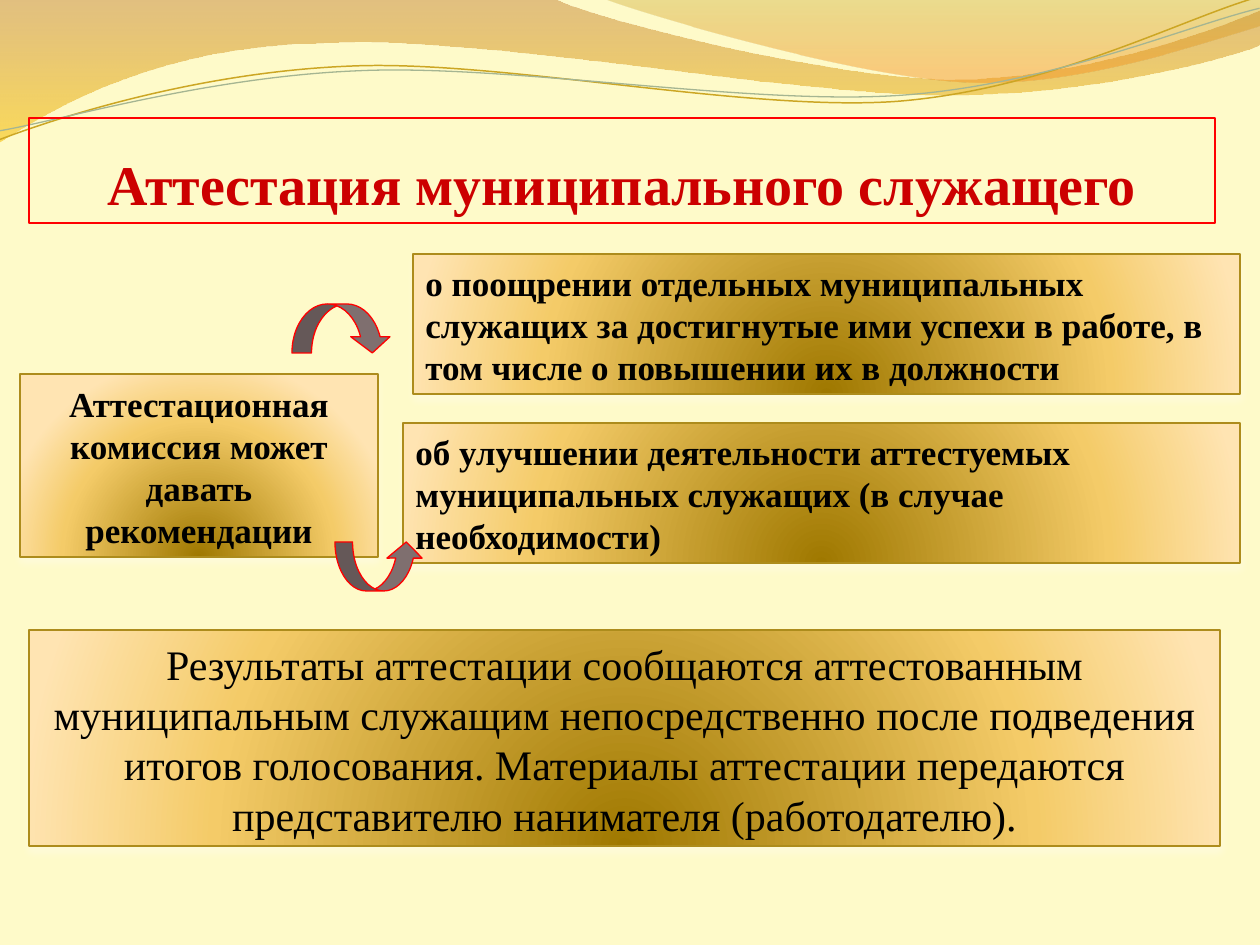
from lxml.etree import SubElement
from pptx import Presentation
from pptx.dml.color import RGBColor
from pptx.enum.shapes import MSO_SHAPE as Preset
from pptx.enum.text import MSO_ANCHOR as Anchor, MSO_AUTO_SIZE as AutoSize, PP_ALIGN as Align
from pptx.oxml import parse_xml
from pptx.oxml.ns import nsdecls, qn
from pptx.util import Emu, Pt

SLIDE_WIDTH, SLIDE_HEIGHT = 1260, 945
SCALE = 9144000 / SLIDE_WIDTH
STRAND_TILT = 357.3
FONT = "Times New Roman"

CREAM = RGBColor(0xFE, 0xFA, 0xC9)
BLACK = RGBColor(0x00, 0x00, 0x00)
CRIMSON = RGBColor(0xCC, 0x00, 0x00)
RED = RGBColor(0xFF, 0x00, 0x00)
GRAY = RGBColor(0x7F, 0x6F, 0x6F)
BRONZE = RGBColor(0xAD, 0x8C, 0x1C)
IVORY = RGBColor(0xFF, 0xFC, 0xEC)
OCHRE = RGBColor(0xCC, 0xA6, 0x24)
SAGE = RGBColor(0xA5, 0xB5, 0x92)

LINEAR_DOWN = '<a:lin ang="5400000" scaled="1"/>'
GLOW_BELOW = (
    '<a:path path="circle">'
    '<a:fillToRect l="50000" t="130000" r="50000" b="-30000"/></a:path>'
)
GOLD_STOPS = [
    (0, RGBColor(0x9F, 0x78, 0x00), 100),
    (68, RGBColor(0xF4, 0xCB, 0x68), 100),
    (100, RGBColor(0xFF, 0xE4, 0xB2), 100),
]
AMBER_STOPS = [
    (0, RGBColor(0xC0, 0x7A, 0x28), 45),
    (100, RGBColor(0xF7, 0xBF, 0x00), 55),
]
ORANGE_STOPS = [
    (0, RGBColor(0xC0, 0x97, 0x09), 30),
    (80, RGBColor(0xF5, 0x93, 0x20), 45),
]

WIDE_WAVE = [
    (0, 0), (554, -1),
    (600, 21, 837, 79, 955, 79), (1075, 79, 1207, 33, 1260, 11),
    (1261, 45),
    (1239, 55, 1096, 96, 940, 95), (784, 94, 481, 35, 324, 43),
    (163, 45, 58, 105, -1, 142), (0, 0),
]
RIGHT_WAVE = [
    (604, -1),
    (641, 14, 859, 78, 969, 82), (1079, 87, 1211, 40, 1260, 26),
    (1260, 0), (604, -1),
]
OCHRE_STRAND = [
    (-3, 110),
    (58, 90, 199, 52, 350, 53), (499, 53, 745, 118, 896, 114),
    (1049, 109, 1184, 45, 1260, 27),
]
SAGE_STRAND = [
    (-2, 101),
    (57, 94, 207, 57, 358, 58), (509, 58, 750, 112, 902, 108),
    (1052, 104, 1188, 52, 1262, 38),
]

PANELS = [
    ((29, 630, 1191, 216), 24, False, Align.CENTER,
     "Результаты аттестации сообщаются аттестованным муниципальным служащим "
     "непосредственно после подведения итогов голосования. Материалы аттестации "
     "передаются представителю нанимателя (работодателю)."),
    ((20, 374, 358, 183), 20, True, Align.CENTER,
     "Аттестационная комиссия может давать рекомендации"),
    ((413, 254, 827, 140), 20, True, Align.LEFT,
     "о поощрении отдельных муниципальных служащих за достигнутые ими успехи "
     "в работе, в том числе о повышении их в должности"),
    ((403, 423, 837, 140), 20, True, Align.LEFT,
     "об улучшении деятельности аттестуемых муниципальных служащих "
     "(в случае необходимости)"),
]
ARROWS = [
    (Preset.CURVED_DOWN_ARROW, (292, 304, 100, 49), (0.4, 0.8, 0.33)),
    (Preset.CURVED_UP_ARROW, (335, 542, 89, 49), (0.36, 0.72, 0.33)),
]


def px(length):
    return Emu(round(length * SCALE))


def set_gradient(shape, stops, direction):
    stop_xml = "".join(
        f'<a:gs pos="{position * 1000}"><a:srgbClr val="{color}">'
        f'<a:alpha val="{alpha * 1000}"/></a:srgbClr></a:gs>'
        for position, color, alpha in stops
    )
    shape.fill.gradient()
    properties = shape.element.spPr
    properties.replace(properties.find(qn("a:gradFill")), parse_xml(
        f'<a:gradFill {nsdecls("a")} rotWithShape="1">'
        f"<a:gsLst>{stop_xml}</a:gsLst>{direction}</a:gradFill>"
    ))


def set_outline(shape, color, width=0.75):
    shape.line.color.rgb = color
    shape.line.width = Pt(width)


def add_shadow(shape):
    effects = shape.element.spPr.find(qn("a:effectLst"))
    shadow = SubElement(effects, qn("a:outerShdw"), blurRad=str(Pt(4.5)),
                        dist=str(Pt(3)), dir="5400000", rotWithShape="0")
    color = SubElement(shadow, qn("a:srgbClr"), val=str(IVORY))
    SubElement(color, qn("a:alpha"), val="48000")


def add_preset(page, preset, frame, outline):
    shape = page.shapes.add_shape(preset, *map(px, frame))
    shape.shadow.inherit = False
    shape.fill.background()
    set_outline(shape, outline)
    return shape


def add_curve(page, steps, close):
    points = [
        (px(step[index]), px(step[index + 1]))
        for step in steps for index in range(0, len(step), 2)
    ]
    builder = page.shapes.build_freeform(*points[0])
    builder.add_line_segments(points[1:], close=close)
    shape = builder.convert_to_shape()
    shape.shadow.inherit = False
    outline = next(shape.element.spPr.iter(qn("a:path")))
    segments = iter(outline.findall(qn("a:lnTo")))
    for step in steps[1:]:
        segment = next(segments)
        if len(step) == 6:
            segment.tag = qn("a:cubicBezTo")
            for extra in (next(segments), next(segments)):
                segment.append(extra[0])
                outline.remove(extra)
    return shape


def add_wave(page, steps, stops):
    wave = add_curve(page, steps, True)
    set_gradient(wave, stops, LINEAR_DOWN)
    wave.line.fill.background()


def add_strand(page, steps, color, width):
    strand = add_curve(page, steps, False)
    strand.rotation = STRAND_TILT
    strand.fill.background()
    set_outline(strand, color, width)


def write_text(box, text, size, color=BLACK, bold=True, align=Align.CENTER):
    frame = box.text_frame
    frame.word_wrap = True
    frame.vertical_anchor = Anchor.BOTTOM
    para = frame.paragraphs[0]
    para.alignment = align
    span = para.add_run()
    span.text = text
    span.font.name = FONT
    span.font.size = Pt(size)
    span.font.bold = bold
    span.font.color.rgb = color


def add_panel(page, frame, size, bold, align, text):
    box = add_preset(page, Preset.RECTANGLE, frame, BRONZE)
    set_gradient(box, GOLD_STOPS, GLOW_BELOW)
    add_shadow(box)
    write_text(box, text, size, bold=bold, align=align)
    box.text_frame.auto_size = AutoSize.SHAPE_TO_FIT_TEXT


def add_arrow(page, preset, frame, adjustments):
    arrow = add_preset(page, preset, frame, RED)
    arrow.fill.solid()
    arrow.fill.fore_color.rgb = GRAY
    for index, value in enumerate(adjustments):
        arrow.adjustments[index] = value


def main():
    deck = Presentation()
    deck.slide_width, deck.slide_height = px(SLIDE_WIDTH), px(SLIDE_HEIGHT)
    page = deck.slides.add_slide(deck.slide_layouts[6])
    page.background.fill.solid()
    page.background.fill.fore_color.rgb = CREAM
    add_wave(page, WIDE_WAVE, AMBER_STOPS)
    add_wave(page, RIGHT_WAVE, ORANGE_STOPS)
    add_strand(page, OCHRE_STRAND, OCHRE, 0.85)
    add_strand(page, SAGE_STRAND, SAGE, 0.75)
    for panel in PANELS:
        add_panel(page, *panel)
    for arrow in ARROWS:
        add_arrow(page, *arrow)
    title = add_preset(page, Preset.RECTANGLE, (29, 118, 1186, 105), RED)
    write_text(title, "Аттестация муниципального служащего", 32, color=CRIMSON)
    deck.save("out.pptx")


if __name__ == "__main__":
    main()
